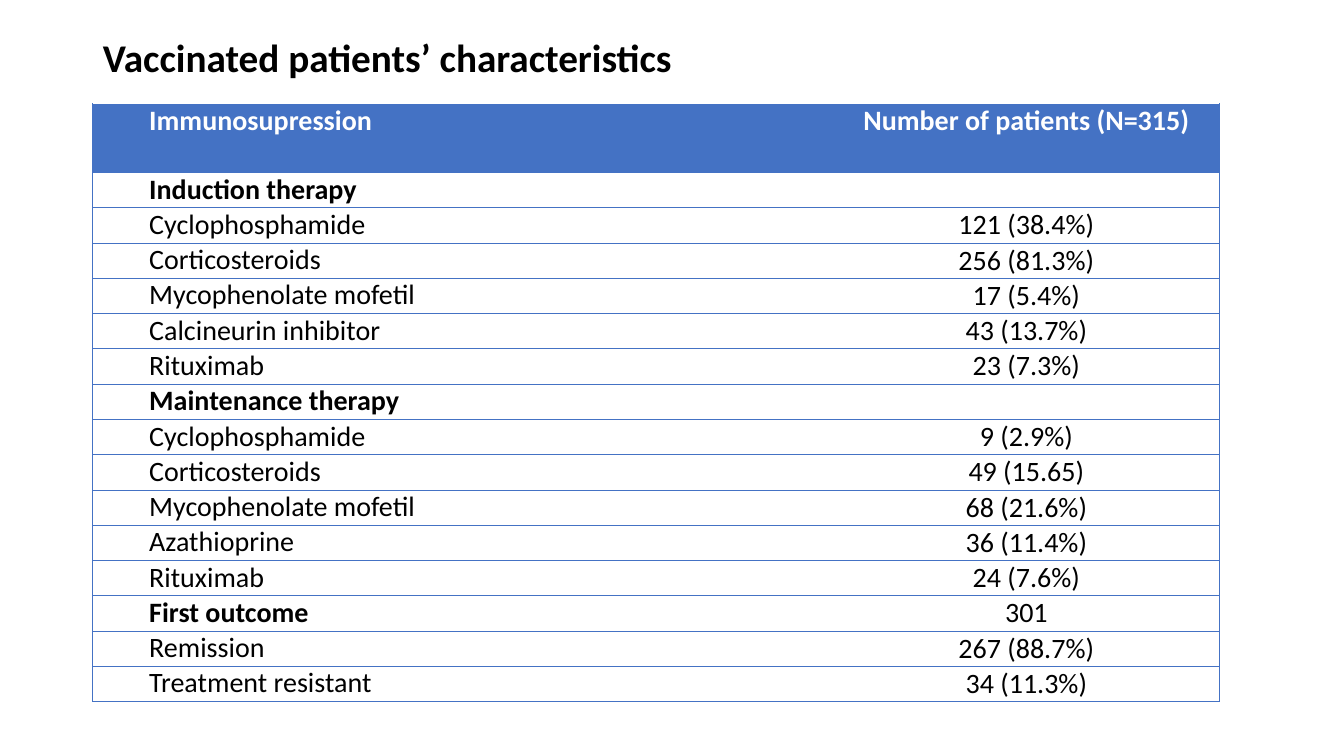
from pptx import Presentation
from pptx.dml.color import RGBColor
from pptx.enum.text import MSO_ANCHOR as Anchor, PP_ALIGN as Align
from pptx.oxml import parse_xml
from pptx.oxml.ns import nsdecls, qn
from pptx.util import Inches, Pt

FONT = "Calibri"
COLORS = {"blue": "4472C4", "white": "FFFFFF", "black": "000000"}
NO_STYLE = "{2D5ABB26-0587-4C30-8999-92F81FD0307C}"
HEADER = ("Immunosupression", "Number of patients (N=315)")
GROUPS = [
    ("Induction therapy", "", [
        ("Cyclophosphamide", "121 (38.4%)"),
        ("Corticosteroids", "256 (81.3%)"),
        ("Mycophenolate mofetil", "17 (5.4%)"),
        ("Calcineurin inhibitor", "43 (13.7%)"),
        ("Rituximab", "23 (7.3%)"),
    ]),
    ("Maintenance therapy", "", [
        ("Cyclophosphamide", "9 (2.9%)"),
        ("Corticosteroids", "49 (15.65)"),
        ("Mycophenolate mofetil", "68 (21.6%)"),
        ("Azathioprine", "36 (11.4%)"),
        ("Rituximab", "24 (7.6%)"),
    ]),
    ("First outcome", "301", [
        ("Remission", "267 (88.7%)"),
        ("Treatment resistant", "34 (11.3%)"),
    ]),
]


def style(para, size, color, bold):
    font = para.font
    font.name = FONT
    font.size = Pt(size)
    font.bold = bold
    font.color.rgb = RGBColor.from_string(COLORS[color])


def add_title(slide, text):
    title = slide.shapes.title
    title.left, title.top = Inches(0.92), Inches(0.15)
    title.width, title.height = Inches(9.11), Inches(0.88)
    frame = title.text_frame
    frame.text = text
    frame.vertical_anchor = Anchor.MIDDLE
    para = frame.paragraphs[0]
    para.alignment = Align.LEFT
    para.line_spacing = 0.9
    style(para, 28, "black", True)


def set_edges(cell, sides):
    props = cell._tc.get_or_add_tcPr()
    for spot, side in enumerate(sides):
        props.insert(spot, parse_xml(
            f'<a:ln{side} {nsdecls("a")} w="6350"><a:solidFill>'
            f'<a:srgbClr val="{COLORS["blue"]}"/></a:solidFill></a:ln{side}>'))


def fill_cell(cell, text, col, head, bold):
    cell.margin_left = cell.margin_right = Inches(0.06)
    cell.margin_top = cell.margin_bottom = 0
    cell.vertical_anchor = Anchor.MIDDLE if col and not head else Anchor.TOP
    cell.text = text
    para = cell.text_frame.paragraphs[0]
    para.alignment = Align.CENTER if col else Align.LEFT
    para._p.get_or_add_pPr().set("marL", str(Inches(0.5)))
    style(para, 20, "white" if head else "black", bold)
    if head:
        cell.fill.solid()
        cell.fill.fore_color.rgb = RGBColor.from_string(COLORS["blue"])
    else:
        cell.fill.background()
    set_edges(cell, "RTB" if col else "LTB")


def add_grid(slide):
    rows = [(HEADER, True)]
    for name, total, items in GROUPS:
        rows.append(((name, total), True))
        rows += [(item, False) for item in items]
    widths = [6.85, 4.32]
    heights = [0.68] + [0.35] * (len(rows) - 1)
    table = slide.shapes.add_table(
        len(rows), len(widths), Inches(0.92), Inches(1.03),
        Inches(sum(widths)), Inches(sum(heights))).table
    table._tbl.tblPr.find(qn("a:tableStyleId")).text = NO_STYLE
    table.horz_banding = False
    for col, width in zip(table.columns, widths):
        col.width = Inches(width)
    for row, (texts, bold) in enumerate(rows):
        table.rows[row].height = Inches(heights[row])
        for col, text in enumerate(texts):
            head = row == 0
            fill_cell(table.cell(row, col), text, col, head,
                      bold and (head or col == 0))


def main():
    deck = Presentation()
    deck.slide_width, deck.slide_height = Inches(13.33), Inches(7.5)
    slide = deck.slides.add_slide(deck.slide_layouts[5])
    add_title(slide, "Vaccinated patients’ characteristics")
    add_grid(slide)
    deck.save("out.pptx")


if __name__ == "__main__":
    main()
